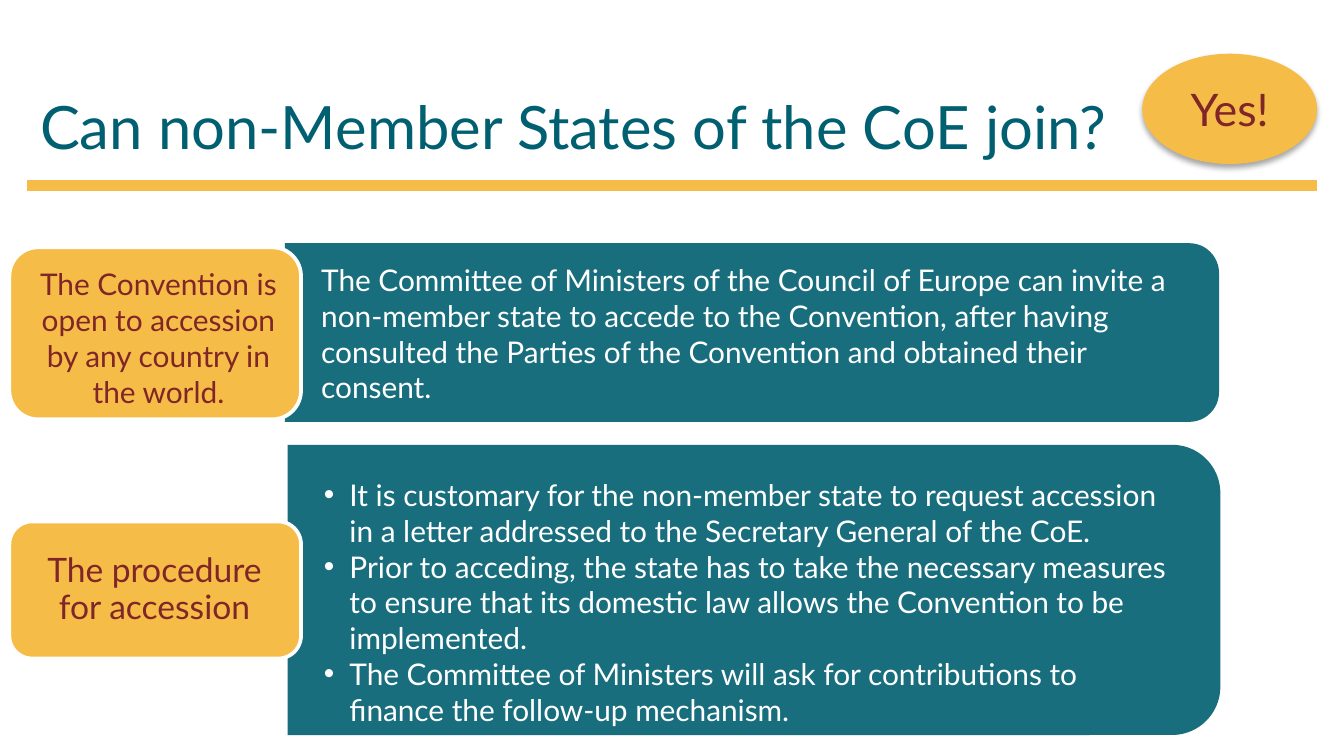
from dataclasses import dataclass

from lxml import etree
from pptx import Presentation
from pptx import util as u
from pptx.dml.color import RGBColor
from pptx.enum import shapes, text
from pptx.oxml import ns


@dataclass(frozen=True)
class Theme:
    font: str = "Lato"
    teal: str = "005F71"
    yellow: str = "F5BD47"
    maroon: str = "802528"
    white: str = "FFFFFF"
    title_size: int = 32
    badge_size: int = 24
    label_size: int = 18
    body_size: int = 16


THEME = Theme()
SLIDE_WIDTH = 10
SLIDE_HEIGHT = SLIDE_WIDTH * 9 / 16
PANEL_INSETS = (0.27, 0.14)
BULLET_INDENT = 0.19

INVITATION = [
    "The Committee of Ministers of the Council of Europe can invite a non-member state "
    "to accede to the Convention, after having consulted the Parties of the Convention "
    "and obtained their consent."
]
PROCEDURE = [
    "It is customary for the non-member state to request accession in a letter "
    "addressed to the Secretary General of the CoE.",
    "Prior to acceding, the state has to take the necessary measures to ensure that "
    "its domestic law allows the Convention to be implemented.",
    "The Committee of Ministers will ask for contributions to finance the follow-up mechanism.",
]


def rgb(value):
    return RGBColor.from_string(value)


def inches(box):
    return [u.Inches(length) for length in box]


def add_bullet(paragraph):
    properties = paragraph._p.get_or_add_pPr()
    properties.set("marL", str(u.Inches(BULLET_INDENT)))
    properties.set("indent", str(-u.Inches(BULLET_INDENT)))
    etree.SubElement(properties, ns.qn("a:buFont")).set("typeface", "Arial")
    etree.SubElement(properties, ns.qn("a:buChar")).set("char", "•")


def write_text(frame, lines, size, color, align=text.PP_ALIGN.LEFT,
               anchor=text.MSO_ANCHOR.MIDDLE, insets=(0.1, 0.05),
               bulleted=False, line_spacing=None):
    frame.word_wrap = True
    frame.vertical_anchor = anchor
    frame.margin_left = frame.margin_right = u.Inches(insets[0])
    frame.margin_top = frame.margin_bottom = u.Inches(insets[1])
    for index, line in enumerate(lines):
        paragraph = frame.add_paragraph() if index else frame.paragraphs[0]
        if bulleted:
            add_bullet(paragraph)
        paragraph.alignment = align
        if line_spacing:
            paragraph.line_spacing = line_spacing
        run = paragraph.add_run()
        run.text = line
        run.font.name = THEME.font
        run.font.size = u.Pt(size)
        run.font.color.rgb = rgb(color)


def add_text(slide, box, lines, **text_format):
    write_text(slide.shapes.add_textbox(*inches(box)).text_frame, lines, **text_format)


def add_filled(slide, preset, box, fill, outline=None):
    shape = slide.shapes.add_shape(preset, *inches(box))
    shape.shadow.inherit = False
    shape.fill.solid()
    shape.fill.fore_color.rgb = rgb(fill)
    if outline:
        shape.line.color.rgb = rgb(outline)
        shape.line.width = u.Pt(2)
    else:
        shape.line.fill.background()
    return shape


def add_rule(slide, start, end, y):
    rule = slide.shapes.add_connector(
        shapes.MSO_CONNECTOR.STRAIGHT, *inches((start, y, end, y)))
    rule.line.color.rgb = rgb(THEME.yellow)
    rule.line.width = u.Pt(6)
    etree.SubElement(rule._element.spPr, ns.qn("a:effectLst"))


def add_panel(slide, box, text_box, lines, bulleted=False):
    # A quarter turn puts the two rounded corners on the right
    left, top, width, height = box
    shift = (width - height) / 2
    panel = add_filled(slide, shapes.MSO_SHAPE.ROUND_2_SAME_RECTANGLE,
                       (left + shift, top - shift, height, width), THEME.teal)
    panel.rotation = 90
    color = panel._element.spPr.find(f"{ns.qn('a:solidFill')}/{ns.qn('a:srgbClr')}")
    etree.SubElement(color, ns.qn("a:alpha")).set("val", "90000")
    add_text(slide, text_box, lines, size=THEME.body_size, color=THEME.white,
             insets=PANEL_INSETS, bulleted=bulleted)


def add_label(slide, box, text_box, caption, size, line_spacing=None):
    add_filled(slide, shapes.MSO_SHAPE.ROUNDED_RECTANGLE, box, THEME.yellow, THEME.white)
    add_text(slide, text_box, [caption], size=size, color=THEME.maroon,
             align=text.PP_ALIGN.CENTER, line_spacing=line_spacing)


def add_badge(slide, box, caption):
    badge = add_filled(slide, shapes.MSO_SHAPE.OVAL, box, THEME.yellow)
    write_text(badge.text_frame, [caption], size=THEME.badge_size, color=THEME.maroon,
               align=text.PP_ALIGN.CENTER)
    # Soft shadow straight below
    effects = badge._element.spPr.find(ns.qn("a:effectLst"))
    shadow = etree.SubElement(effects, ns.qn("a:outerShdw"), blurRad=str(u.Pt(3.1)),
                              dist=str(u.Pt(1.8)), dir="5400000", rotWithShape="0")
    color = etree.SubElement(shadow, ns.qn("a:srgbClr"), val="000000")
    etree.SubElement(color, ns.qn("a:alpha"), val="35000")


def main():
    deck = Presentation()
    deck.slide_width, deck.slide_height = inches((SLIDE_WIDTH, SLIDE_HEIGHT))
    slide = deck.slides.add_slide(deck.slide_layouts[6])

    # Heading
    add_rule(slide, 9.8, 0.2, 1.38)
    add_text(slide, (0.2, 0.31, 9.6, 0.94), ["Can non-Member States of the CoE join?"],
             size=THEME.title_size, color=THEME.teal, anchor=text.MSO_ANCHOR.BOTTOM)

    # Explanations
    add_panel(slide, (2.12, 1.81, 6.95, 1.33), (2.12, 1.88, 6.89, 1.2), INVITATION)
    add_panel(slide, (2.14, 3.31, 6.94, 2.16), (2.14, 3.4, 6.85, 2.16), PROCEDURE,
              bulleted=True)

    # Labels overlapping the explanations
    add_label(slide, (0.07, 1.84, 2.17, 1.28), (0.15, 1.85, 2.06, 1.32),
              "The Convention is open to accession by any country in the world.",
              THEME.body_size)
    add_label(slide, (0.07, 3.88, 2.17, 1.02), (0.12, 3.93, 2.06, 0.92),
              "The procedure for accession", THEME.label_size, line_spacing=0.9)

    # Answer
    add_badge(slide, (8.5, 0.4, 1.3, 0.82), "Yes!")

    deck.save("out.pptx")


if __name__ == "__main__":
    main()
